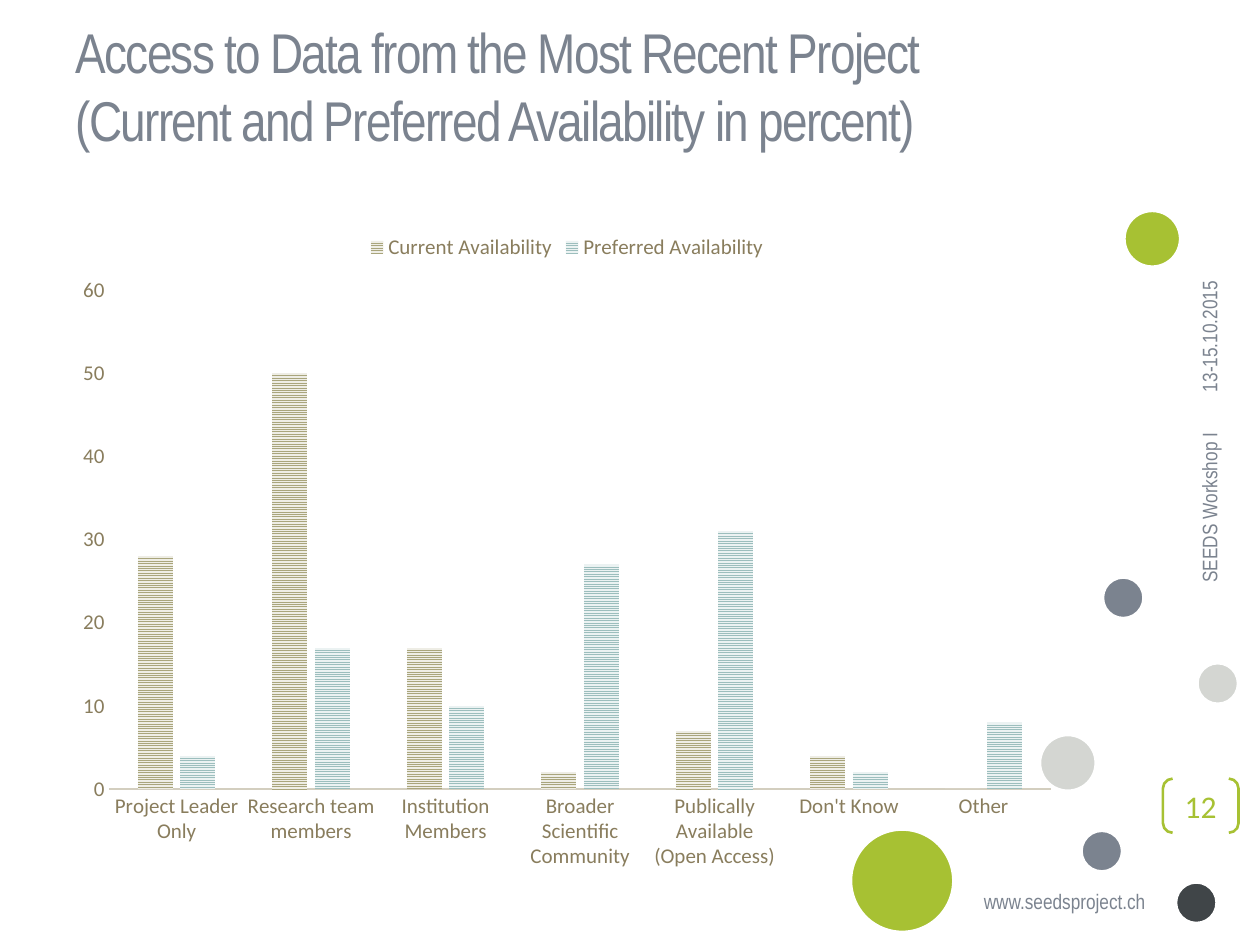
"""Build the slide comparing current and preferred access to project data."""
from dataclasses import dataclass

from pptx import Presentation
from pptx import util as u
from pptx.chart.data import CategoryChartData
from pptx.dml.color import RGBColor
from pptx.enum import chart as charts
from pptx.enum import dml, shapes, text


@dataclass(frozen=True)
class Theme:
    """Colours, fonts and type sizes of the slide."""

    green: str = "A7C133"
    slate: str = "7B838F"
    silver: str = "D4D6D2"
    charcoal: str = "404548"
    white: str = "FFFFFF"
    label: str = "897D5D"
    axis: str = "D3CEBF"
    current: tuple = ("A9A57C", "EEEDE5")
    preferred: tuple = ("9CBEBD", "EBF2F2")
    heading_font: str = "Arial Narrow"
    body_font: str = "Calibri"
    title_size: int = 32
    number_size: int = 18
    small_size: int = 12


def rgb(value):
    """Turn a hex string into a colour."""
    return RGBColor.from_string(value)


def style_font(font, name, size, color):
    """Set the typeface, size and colour of a font."""
    font.name = name
    font.size = u.Pt(size)
    font.color.rgb = rgb(color)


def write_text(frame, content, *, font, size, color, align=text.PP_ALIGN.LEFT,
               anchor=text.MSO_ANCHOR.MIDDLE, wrap=True, spacing=None):
    """Fill a text frame with one formatted paragraph."""
    frame.word_wrap = wrap
    frame.auto_size = text.MSO_AUTO_SIZE.NONE
    frame.vertical_anchor = anchor
    paragraph = frame.paragraphs[0]
    paragraph.alignment = align
    run = paragraph.add_run()
    run.text = content
    style_font(run.font, font, size, color)
    if spacing is not None:
        run.font._element.set("spc", str(spacing))


class SlideBuilder:
    """Hold the theme and current slide, and add each kind of element."""

    def __init__(self, slide, theme):
        """Keep the slide and its theme."""
        self.slide = slide
        self.theme = theme

    def title(self, content, box):
        """Place the title placeholder."""
        shape = self.slide.shapes.title
        shape.left, shape.top, shape.width, shape.height = map(u.Inches, box)
        shape.text_frame.margin_right = u.Inches(0.5)
        write_text(shape.text_frame, content, font=self.theme.heading_font,
                   size=self.theme.title_size, color=self.theme.slate, spacing=-100)

    def circle(self, left, top, diameter, color):
        """Add a decorative circle with a white rim."""
        shape = self.slide.shapes.add_shape(
            shapes.MSO_SHAPE.OVAL, *map(u.Inches, (left, top, diameter, diameter)))
        shape.shadow.inherit = False
        shape.fill.solid()
        shape.fill.fore_color.rgb = rgb(color)
        shape.line.color.rgb = rgb(self.theme.white)
        shape.line.width = u.Pt(2)

    def label(self, content, box, rotation=0, **options):
        """Add a small text label."""
        shape = self.slide.shapes.add_textbox(*map(u.Inches, box))
        shape.rotation = rotation
        write_text(shape.text_frame, content, font=self.theme.heading_font,
                   size=self.theme.small_size, color=self.theme.slate, **options)

    def page_number(self, content, box):
        """Add the bracketed page number."""
        shape = self.slide.shapes.add_shape(
            shapes.MSO_SHAPE.DOUBLE_BRACKET, *map(u.Inches, box))
        shape.adjustments[0] = 0.179
        shape.shadow.inherit = False
        shape.fill.background()
        shape.line.color.rgb = rgb(self.theme.green)
        shape.line.width = u.Pt(1.5)
        frame = shape.text_frame
        frame.margin_left = frame.margin_right = 0
        frame.margin_top = frame.margin_bottom = 0
        write_text(frame, content, font=self.theme.body_font,
                   size=self.theme.number_size, color=self.theme.green,
                   align=text.PP_ALIGN.CENTER)

    def column_chart(self, categories, series, box):
        """Add a clustered column chart with patterned columns."""
        theme = self.theme
        data = CategoryChartData()
        data.categories = categories
        for name, values, _ in series:
            data.add_series(name, values)
        chart = self.slide.shapes.add_chart(
            charts.XL_CHART_TYPE.COLUMN_CLUSTERED, *map(u.Inches, box), data).chart
        style_font(chart.font, theme.body_font, theme.small_size, theme.label)
        chart.has_title = False
        chart.has_legend = True
        chart.legend.position = charts.XL_LEGEND_POSITION.TOP
        chart.legend.include_in_layout = False

        plot = chart.plots[0]
        plot.vary_by_categories = False
        plot.gap_width = 164
        plot.overlap = -22
        for column, (_, _, colors) in zip(plot.series, series):
            fill = column.format.fill
            fill.patterned()
            fill.pattern = dml.MSO_PATTERN.NARROW_HORIZONTAL
            fill.fore_color.rgb, fill.back_color.rgb = map(rgb, colors)

        for axis in (chart.category_axis, chart.value_axis):
            axis.has_major_gridlines = False
            axis.major_tick_mark = charts.XL_TICK_MARK.NONE
            axis.minor_tick_mark = charts.XL_TICK_MARK.NONE
        chart.category_axis.format.line.color.rgb = rgb(theme.axis)
        chart.category_axis.format.line.width = u.Pt(1.5)
        chart.value_axis.format.line.fill.background()
        chart.value_axis.minimum_scale = 0
        chart.value_axis.maximum_scale = 60
        chart.value_axis.major_unit = 10


def main():
    """Build and save the presentation."""
    presentation = Presentation()
    presentation.slide_width = u.Inches(10)
    presentation.slide_height = u.Inches(7.5)
    slide = presentation.slides.add_slide(presentation.slide_layouts[5])
    theme = Theme()
    builder = SlideBuilder(slide, theme)

    small, medium, large = 0.33, 0.45, 0.82
    for circle in (
        (6.75, 6.58, large, theme.green),
        (8.92, 1.67, medium, theme.green),
        (9.33, 7, small, theme.charcoal),
        (8.25, 5.83, medium, theme.silver),
        (9.5, 5.26, small, theme.silver),
        (8.58, 6.59, small, theme.slate),
        (8.75, 4.58, small, theme.slate),
    ):
        builder.circle(*circle)

    builder.label("www.seedsproject.ch", (7.71, 7, 1.54, 0.3),
                  anchor=text.MSO_ANCHOR.TOP, wrap=False)
    builder.page_number("12", (9.23, 6.18, 0.6, 0.43))
    builder.label("SEEDS Workshop I", (8.72, 4.03, 1.75, 0.36), rotation=270,
                  align=text.PP_ALIGN.RIGHT)
    builder.label("13-15.10.2015", (8.95, 2.4, 1.29, 0.33), rotation=270)
    builder.title("Access to Data from the Most Recent Project "
                  "(Current and Preferred Availability in percent)",
                  (0.5, 0.05, 8, 1.25))
    builder.column_chart(
        ["Project Leader Only", "Research team members", "Institution Members",
         "Broader Scientific Community", "Publically Available (Open Access)",
         "Don't Know", "Other"],
        [("Current Availability", (28, 50, 17, 2, 7, 4, 0), theme.current),
         ("Preferred Availability", (4, 17, 10, 27, 31, 2, 8), theme.preferred)],
        (0.5, 1.75, 8, 5.25))
    presentation.save("out.pptx")


if __name__ == "__main__":
    main()
